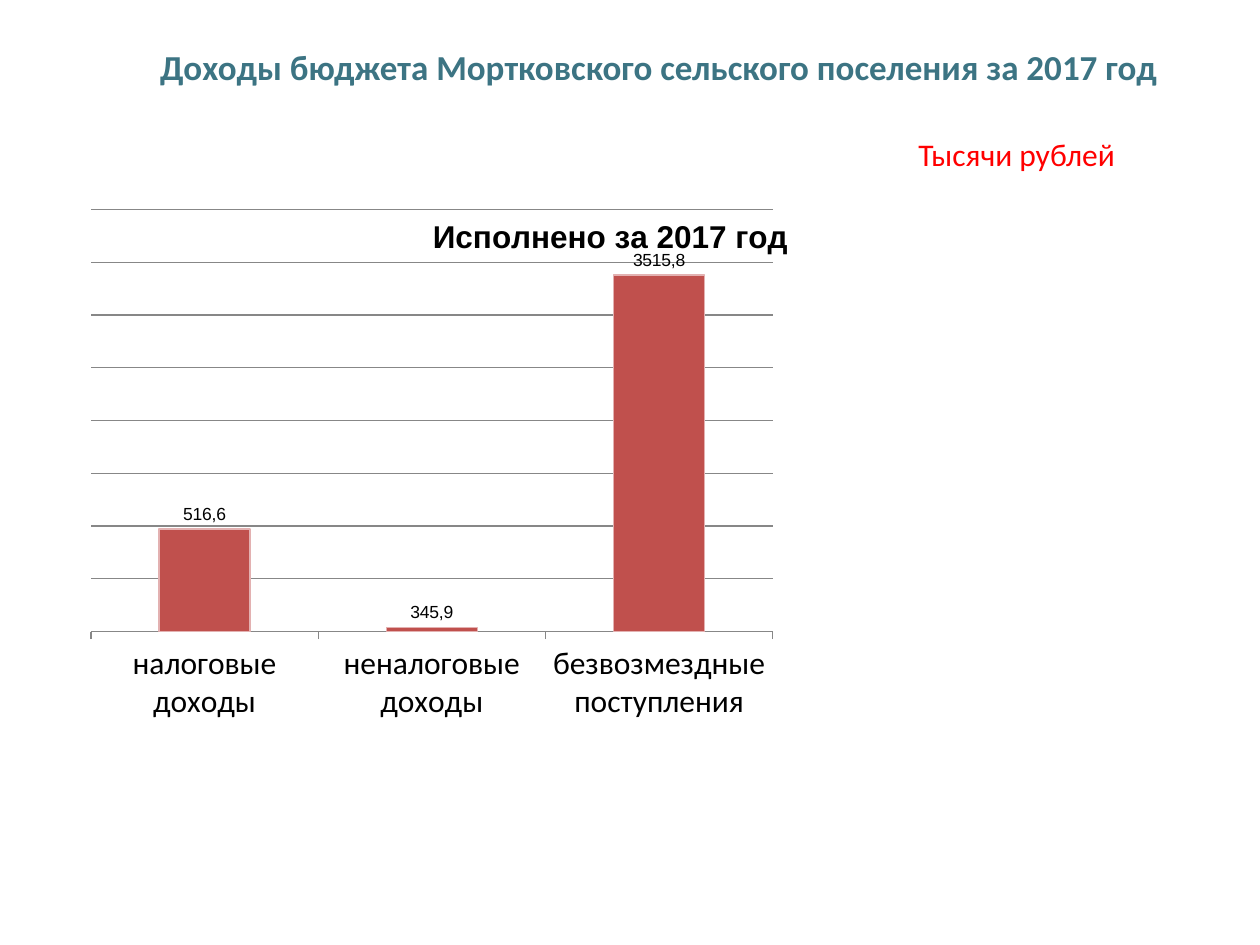
from dataclasses import dataclass
from typing import Any

from lxml import etree
from pptx import Presentation
from pptx.chart.data import CategoryChartData
from pptx.dml.color import RGBColor
from pptx.enum.chart import XL_CHART_TYPE as ChartType
from pptx.enum.chart import XL_LABEL_POSITION as LabelPosition
from pptx.enum.chart import XL_TICK_MARK as TickMark
from pptx.enum.text import MSO_ANCHOR as Anchor
from pptx.enum.text import PP_ALIGN as Align
from pptx.oxml import parse_xml
from pptx.oxml.ns import nsdecls, qn
from pptx.util import Inches, Pt

COLORS = {
    "title": "3C7483",
    "unit": "FF0000",
    "text": "000000",
    "bar": "C0504D",
    "bar_edge": "E3B1B1",
    "grid": "878787",
    "plot": "FFFFFF",
}
INCOME = [
    ("налоговые доходы", 1944, "516,6"),
    ("неналоговые доходы", 79, "345,9"),
    ("безвозмездные поступления", 6757.2, "3515,8"),
]


@dataclass
class SlideBuilder:
    """Holds the style and the current slide and adds its elements."""

    page: Any
    text_font: str = "Calibri"
    chart_font: str = "Arial"

    def color(self, name):
        return RGBColor.from_string(COLORS[name])

    def style_font(self, font, name, size, color="text", bold=False):
        font.name = name
        font.size = Pt(size)
        font.bold = bold
        font.color.rgb = self.color(color)

    def style_line(self, line, color):
        line.color.rgb = self.color(color)
        line.width = Pt(0.75)

    def fill_box(self, box, place, text, size, color, bold=False):
        box.left, box.top, box.width, box.height = map(Inches, place)
        frame = box.text_frame
        frame.word_wrap = True
        frame.vertical_anchor = Anchor.TOP
        para = frame.paragraphs[0]
        para.text = text
        para.alignment = Align.LEFT
        para.space_before = Pt(0)
        self.style_font(para.font, self.text_font, size, color, bold)

    def title(self, place, text):
        self.fill_box(self.page.shapes.title, place, text, 20, "title", bold=True)

    def label(self, place, text):
        box = self.page.shapes.add_textbox(*map(Inches, place))
        self.fill_box(box, place, text, 18, "unit")

    def lay_out_plot(self, chart, place):
        area = chart._chartSpace.find(".//" + qn("c:plotArea"))
        for old in area.findall(qn("c:layout")):
            area.remove(old)
        layout = parse_xml(f"<c:layout {nsdecls('c')}><c:manualLayout/></c:layout>")
        settings = [("layoutTarget", "inner"), ("xMode", "edge"), ("yMode", "edge")]
        settings += zip("xywh", map(str, place))
        for tag, value in settings:
            etree.SubElement(layout[0], qn(f"c:{tag}"), val=value)
        area.insert(0, layout)
        area.append(parse_xml(
            f"<c:spPr {nsdecls('c', 'a')}><a:solidFill>"
            f'<a:srgbClr val="{COLORS["plot"]}"/></a:solidFill></c:spPr>'
        ))

    def column_chart(self, place, heading, rows, plot_place):
        names, values, captions = zip(*rows)
        data = CategoryChartData()
        data.categories = names
        data.add_series(heading, values)
        chart = self.page.shapes.add_chart(
            ChartType.COLUMN_CLUSTERED, *map(Inches, place), data
        ).chart
        self.style_font(chart.font, self.chart_font, 10)
        chart.has_legend = False
        chart.has_title = True
        chart.chart_title.include_in_layout = True
        para = chart.chart_title.text_frame.paragraphs[0]
        para.text = heading
        self.style_font(para.font, self.chart_font, 18, bold=True)

        axis = chart.category_axis
        axis.major_tick_mark = TickMark.OUTSIDE
        self.style_font(axis.tick_labels.font, self.text_font, 18)
        self.style_line(axis.format.line, "grid")
        scale = chart.value_axis
        scale.visible = False
        scale.minimum_scale, scale.maximum_scale, scale.major_unit = 0, 8000, 1000
        scale.has_major_gridlines = True
        self.style_line(scale.major_gridlines.format.line, "grid")

        plot = chart.plots[0]
        plot.gap_width = 150
        plot.vary_by_categories = False
        series = plot.series[0]
        series.format.fill.solid()
        series.format.fill.fore_color.rgb = self.color("bar")
        self.style_line(series.format.line, "bar_edge")
        series.data_labels.show_value = True
        series.data_labels.position = LabelPosition.OUTSIDE_END
        for index, caption in enumerate(captions):
            point_label = series.points[index].data_label
            para = point_label.text_frame.paragraphs[0]
            para.text = caption
            self.style_font(para.font, self.chart_font, 10)
            point_label.position = LabelPosition.OUTSIDE_END
        self.lay_out_plot(chart, plot_place)


def main():
    deck = Presentation()
    deck.slide_width, deck.slide_height = Inches(10), Inches(7.5)
    builder = SlideBuilder(deck.slides.add_slide(deck.slide_layouts[5]))
    builder.title(
        (1.17, 0.31, 8.36, 0.43),
        "Доходы бюджета Мортковского сельского поселения за 2017 год",
    )
    builder.column_chart(
        (0.55, 1.53, 8.59, 4.41), "Исполнено за 2017 год", INCOME,
        (0.02, 0.03, 0.63, 0.76),
    )
    builder.label((7.19, 1.02, 1.8, 0.4), "Тысячи рублей")
    deck.save("out.pptx")


if __name__ == "__main__":
    main()
